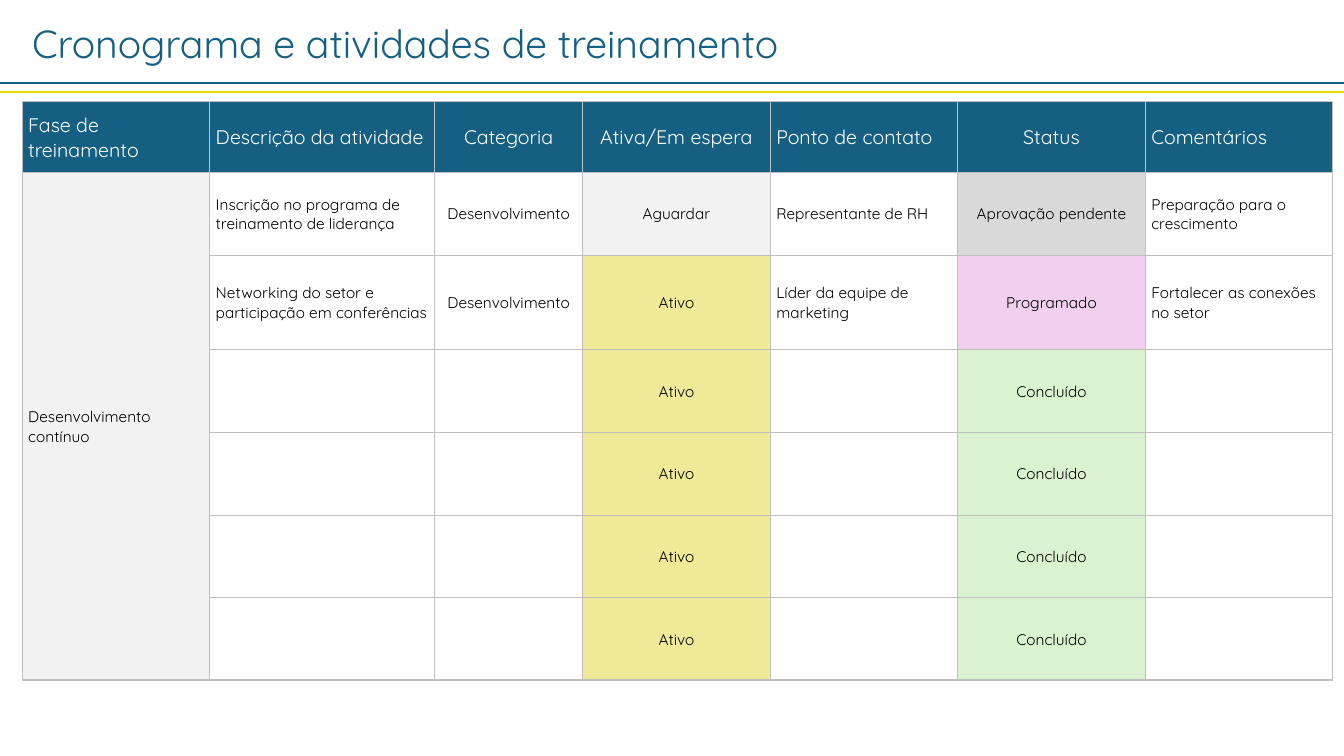
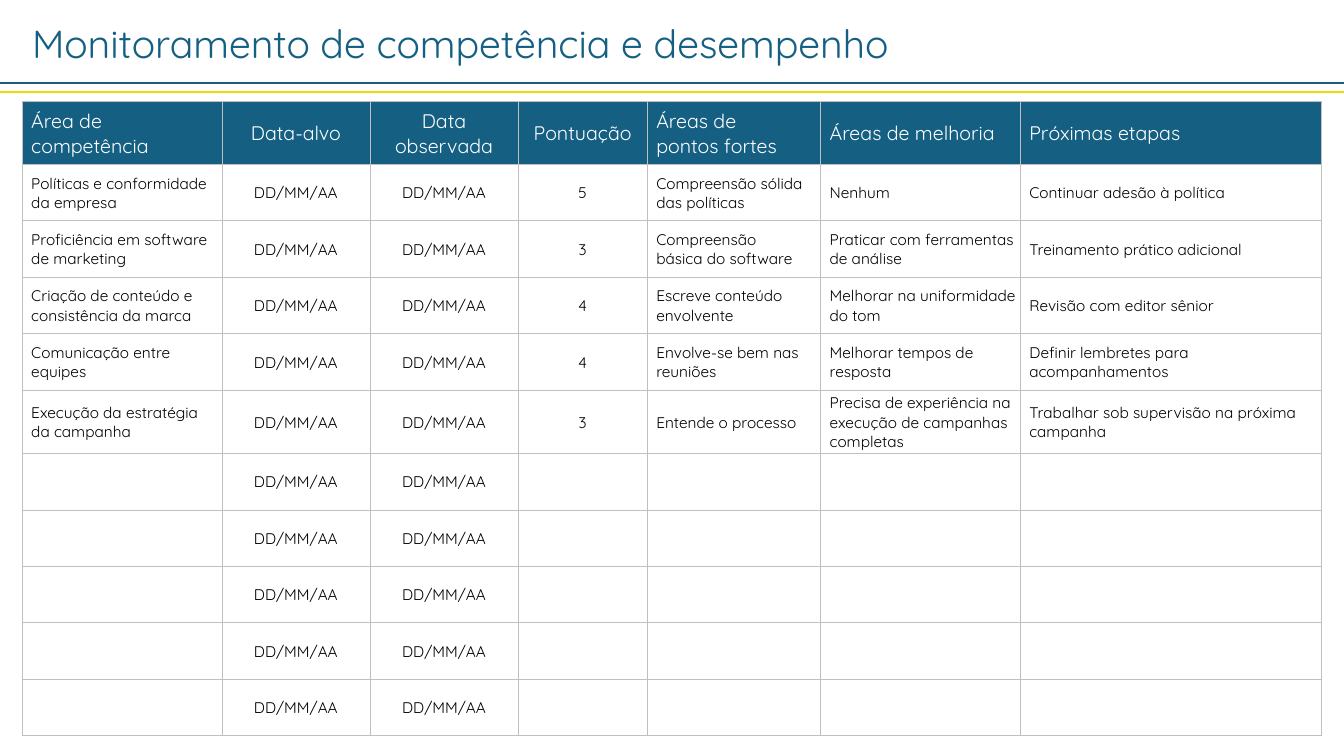
from dataclasses import dataclass

from lxml.etree import SubElement
from pptx import Presentation
from pptx.dml.color import RGBColor as RGB
from pptx.enum.shapes import MSO_CONNECTOR as CONN
from pptx.enum.text import MSO_ANCHOR as ANCHOR, MSO_AUTO_SIZE as AUTO, PP_ALIGN as ALIGN
from pptx.oxml.ns import qn
from pptx.util import Inches, Pt


@dataclass(frozen=True)
class Theme:
    font: str = "Quicksand"
    title_size: int = 28
    head_size: int = 14
    body_size: int = 11
    blue: str = "156082"
    yellow: str = "E8DD06"
    border: str = "BFBFBF"
    white: str = "FFFFFF"
    black: str = "000000"
    light: str = "F2F2F2"
    gray: str = "D9D9D9"
    gold: str = "F0EA98"
    pink: str = "F2CEEF"
    green: str = "DAF2D0"


T = Theme()
WIDTH, HEIGHT = 13.33, 7.5
LEFT, TABLE_TOP = 0.22, 1.01

# Fill of a body cell by its wording
STATE_FILLS = {
    "Aguardar": T.light,
    "Ativo": T.gold,
    "Aprovação pendente": T.gray,
    "Programado": T.pink,
    "Concluído": T.green,
    "Desenvolvimento contínuo": T.light,
}


class Deck:
    def __init__(self):
        self.prs = Presentation()
        self.prs.slide_width = Inches(WIDTH)
        self.prs.slide_height = Inches(HEIGHT)
        self.s = None

    def slide(self, title, title_width):
        """Start a slide with its title and the two rules below it."""
        self.s = self.prs.slides.add_slide(self.prs.slide_layouts[6])
        self.title(title, title_width)
        self.rule(0.82, T.blue)
        self.rule(0.91, T.yellow)

    def add_text(self, tf, text, size, color, align=ALIGN.LEFT):
        p = tf.paragraphs[0]
        p.alignment = align
        for i, line in enumerate(text.split("\n")):
            if i:
                p.add_line_break()
            r = p.add_run()
            r.text = line
            r.font.name = T.font
            r.font.size = Pt(size)
            r.font.color.rgb = RGB.from_string(color)

    def title(self, text, width):
        sp = self.s.shapes.add_textbox(Inches(LEFT), Inches(0.14), Inches(width), Inches(0.57))
        tf = sp.text_frame
        tf.word_wrap = True
        tf.auto_size = AUTO.SHAPE_TO_FIT_TEXT
        self.add_text(tf, text, T.title_size, T.blue)

    def rule(self, y, color):
        sp = self.s.shapes.add_connector(CONN.STRAIGHT, 0, Inches(y), Inches(WIDTH), Inches(y))
        sp.line.color.rgb = RGB.from_string(color)
        sp.line.width = Pt(1.5)
        SubElement(sp._element.spPr, qn("a:effectLst"))

    def borders(self, cell, bottom):
        tc_pr = cell._tc.get_or_add_tcPr()
        for side, width in (("L", 0.5), ("R", 0.5), ("T", 0.5), ("B", bottom)):
            ln = SubElement(tc_pr, qn(f"a:ln{side}"), w=str(Pt(width)))
            fill = SubElement(ln, qn("a:solidFill"))
            SubElement(fill, qn("a:srgbClr"), val=T.border)

    def cell(self, cell, text, head, centred, indent, bottom):
        self.borders(cell, bottom)
        cell.fill.solid()
        fill = T.blue if head else STATE_FILLS.get(text, T.white)
        cell.fill.fore_color.rgb = RGB.from_string(fill)
        cell.vertical_anchor = ANCHOR.MIDDLE
        cell.margin_left = Inches(0.01 if centred else indent)
        cell.margin_top = cell.margin_right = Inches(0.01)
        cell.margin_bottom = 0
        if text:
            size, color = (T.head_size, T.white) if head else (T.body_size, T.black)
            align = ALIGN.CENTER if centred else ALIGN.LEFT
            self.add_text(cell.text_frame, text, size, color, align)

    def table(self, rows, widths, heights, centred, indent, last_border=0.5, merge_first=False):
        frame = self.s.shapes.add_table(
            len(rows), len(widths), Inches(LEFT), Inches(TABLE_TOP),
            Inches(sum(widths)), Inches(sum(heights)))
        tbl = frame.table
        tbl.first_row = tbl.horz_banding = False
        for col, w in zip(tbl.columns, widths):
            col.width = Inches(w)
        for row, h in zip(tbl.rows, heights):
            row.height = Inches(h)
        last = len(rows) - 1
        if merge_first:
            tbl.cell(1, 0).merge(tbl.cell(last, 0))
        for i, row in enumerate(rows):
            for j, text in enumerate(row):
                cell = tbl.cell(i, j)
                at_end = i == last or cell.is_merge_origin
                self.cell(cell, text, i == 0, j in centred, indent,
                          last_border if at_end else 0.5)


def schedule(deck):
    deck.slide("Cronograma e atividades de treinamento", 9.7)
    rows = [
        ["Fase de treinamento", "Descrição da atividade", "Categoria", "Ativa/Em espera",
         "Ponto de contato", "Status", "Comentários"],
        ["Desenvolvimento contínuo", "Inscrição no programa de treinamento de liderança",
         "Desenvolvimento", "Aguardar", "Representante de RH", "Aprovação pendente",
         "Preparação para o crescimento"],
        ["", "Networking do setor e participação em conferências", "Desenvolvimento", "Ativo",
         "Líder da equipe de marketing", "Programado", "Fortalecer as conexões no setor"],
    ] + [["", "", "", "Ativo", "", "Concluído", ""]] * 4
    deck.table(rows, [1.86, 2.23, 1.47] + [1.86] * 4, [0.7, 0.82, 0.94] + [0.82] * 4,
               centred={2, 3, 5}, indent=0.06, last_border=1.5, merge_first=True)


def performance(deck):
    deck.slide("Monitoramento de competência e desempenho", 10.83)
    date = "DD/MM/AA"
    # Area, score, strengths, improvements, next steps
    reviews = [
        ("Políticas e conformidade da empresa", "5", "Compreensão sólida das políticas",
         "Nenhum", "Continuar adesão à política"),
        ("Proficiência em software de marketing", "3", "Compreensão \nbásica do software",
         "Praticar com ferramentas de análise", "Treinamento prático adicional"),
        ("Criação de conteúdo e consistência da marca", "4", "Escreve conteúdo envolvente",
         "Melhorar na uniformidade do tom", "Revisão com editor sênior"),
        ("Comunicação entre equipes", "4", "Envolve-se bem nas reuniões",
         "Melhorar tempos de resposta", "Definir lembretes para acompanhamentos"),
        ("Execução da estratégia da campanha", "3", "Entende o processo",
         "Precisa de experiência na execução de campanhas completas",
         "Trabalhar sob supervisão na próxima campanha"),
    ] + [("",) * 5] * 5
    head = ["Área de competência", "Data-alvo", "Data observada", "Pontuação",
            "Áreas de \npontos fortes", "Áreas de melhoria", "Próximas etapas"]
    rows = [head] + [[area, date, date, *rest] for area, *rest in reviews]
    deck.table(rows, [1.98, 1.47, 1.47, 1.28, 1.72, 1.98, 2.99],
               [0.62] + [0.56] * 4 + [0.63] + [0.56] * 5, centred={1, 2, 3}, indent=0.09)


def main():
    deck = Deck()
    schedule(deck)
    performance(deck)
    deck.prs.save("out.pptx")


if __name__ == "__main__":
    main()
